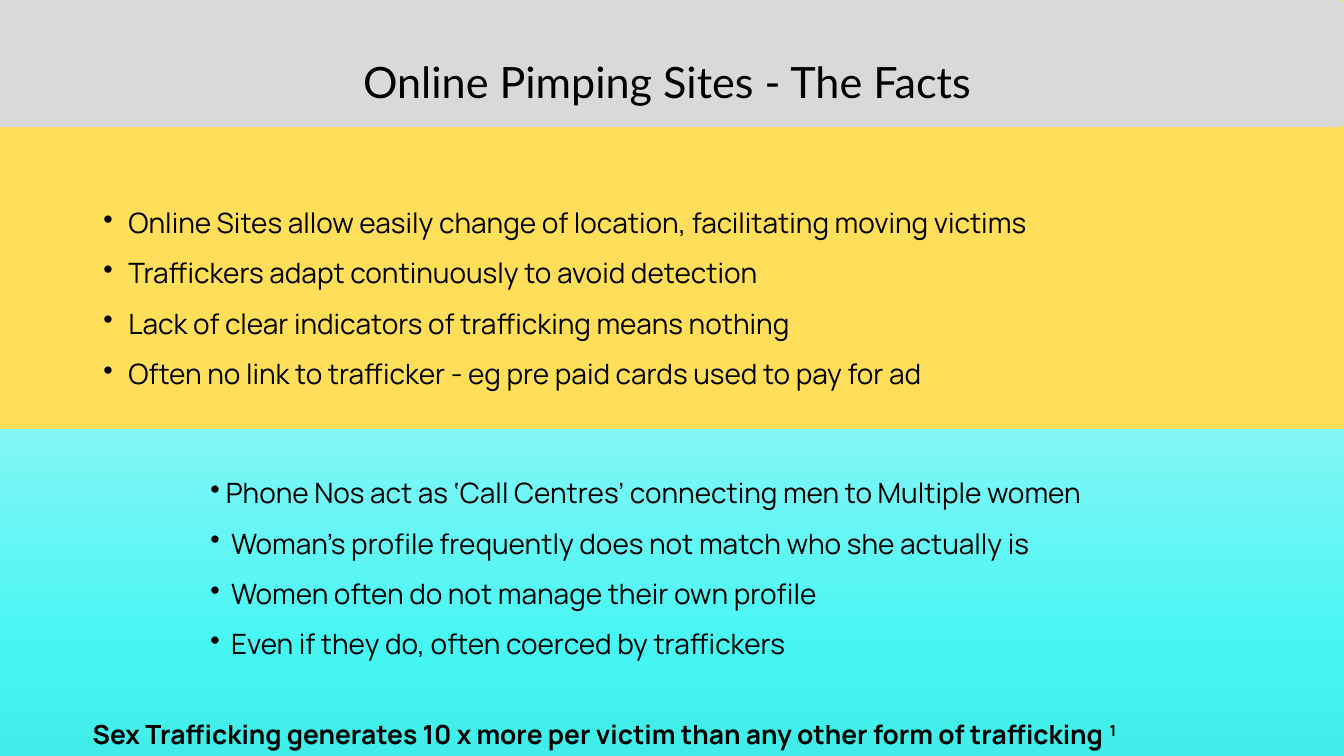
"""Build a slide of facts about online pimping sites."""
from copy import deepcopy
from dataclasses import dataclass

from lxml.etree import SubElement
from pptx import Presentation
from pptx.dml.color import RGBColor
from pptx.enum.shapes import MSO_SHAPE
from pptx.enum.text import MSO_AUTO_SIZE, PP_ALIGN
from pptx.oxml.ns import qn
from pptx.util import Emu, Pt

EMU_PER_PX = 9144


@dataclass(frozen=True)
class Theme:
    """Colours, fonts and type sizes of the slide."""
    page: str = "FFDE59"
    header: str = "D9D9D9"
    gradient: tuple = ((0, "82F6F6"), (0.69, "45F6F3"), (1, "41EDE9"))
    ink: str = "000000"
    title_font: str = "Lato"
    body_font: str = "Manrope"
    title_size: float = 46.2
    title_leading: float = 96.5
    body_size: float = 30
    closing_size: float = 28.3
    body_leading: float = 1.5


THEME = Theme()

SITE_FACTS = (
    "Online Sites allow easily change of location, facilitating moving victims",
    "Traffickers adapt continuously to avoid detection",
    "Lack of clear indicators of trafficking means nothing",
    "Often no link to trafficker - eg pre paid cards used to pay for ad",
)
PROFILE_FACTS = (
    "Phone Nos act as ‘Call Centres’ connecting men to Multiple women",
    "Woman’s profile frequently does not match who she actually is",
    "Women often do not manage their own profile",
    "Even if they do, often coerced by traffickers",
)


def px(length):
    """Turn px into EMU."""
    return Emu(length * EMU_PER_PX)


def add_band(page, left, top, width, height, radius):
    """Add a borderless band with slightly rounded corners."""
    band = page.shapes.add_shape(
        MSO_SHAPE.ROUNDED_RECTANGLE, px(left), px(top), px(width), px(height))
    band.adjustments[0] = radius / height
    band.shadow.inherit = False
    band.line.fill.background()
    return band


def fill_solid(fill, colour):
    """Fill with one colour."""
    fill.solid()
    fill.fore_color.rgb = RGBColor.from_string(colour)


def fill_gradient(band, stops):
    """Fill a band with a gradient from top to bottom."""
    band.fill.gradient()
    band.fill.gradient_angle = 270
    stop_list = next(band.element.iter(qn("a:gsLst")))
    for _ in stops[2:]:
        stop_list.append(deepcopy(stop_list[-1]))
    for stop, (position, colour) in zip(band.fill.gradient_stops, stops):
        stop.position = position
        stop.color.rgb = RGBColor.from_string(colour)


def add_text_box(page, left, top, width, height):
    """Add a wrapping text box without margins and return its frame."""
    box = page.shapes.add_textbox(px(left), px(top), px(width), px(height))
    frame = box.text_frame
    frame.word_wrap = True
    frame.auto_size = MSO_AUTO_SIZE.SHAPE_TO_FIT_TEXT
    frame.margin_left = frame.margin_right = 0
    frame.margin_top = frame.margin_bottom = 0
    return frame


def style_paragraph(para, font, size, leading, align, bold=False):
    """Set the type, leading and alignment of a paragraph."""
    para.alignment = align
    para.line_spacing = leading
    para.font.name = font
    para.font.size = Pt(size)
    para.font.bold = bold
    para.font.color.rgb = RGBColor.from_string(THEME.ink)


def set_bullet(para, margin, hang):
    """Give a paragraph a hanging bullet."""
    properties = para._p.get_or_add_pPr()
    properties.set("marL", str(px(margin)))
    properties.set("indent", str(px(-hang)))
    SubElement(properties, qn("a:buChar")).set("char", "•")


def add_bullets(page, place, facts, indents):
    """Add a bulleted list with one (margin, hang) pair for each fact."""
    frame = add_text_box(page, *place)
    for index, (fact, (margin, hang)) in enumerate(zip(facts, indents)):
        para = frame.add_paragraph() if index else frame.paragraphs[0]
        para.text = fact
        para.level = 1
        set_bullet(para, margin, hang)
        style_paragraph(para, THEME.body_font, THEME.body_size,
                        THEME.body_leading, PP_ALIGN.JUSTIFY)


def add_title(page, place, text):
    """Add the centred title."""
    para = add_text_box(page, *place).paragraphs[0]
    para.text = text
    style_paragraph(para, THEME.title_font, THEME.title_size,
                    Pt(THEME.title_leading), PP_ALIGN.CENTER)


def add_closing(page, place, text, note):
    """Add the bold closing line with a raised note number."""
    para = add_text_box(page, *place).paragraphs[0]
    para.add_run().text = text
    span = para.add_run()
    span.text = note
    span._r.get_or_add_rPr().set("baseline", "30000")
    style_paragraph(para, THEME.body_font, THEME.closing_size,
                    THEME.body_leading, PP_ALIGN.LEFT, bold=True)


def main():
    """Build and save the slide."""
    deck = Presentation()
    deck.slide_width, deck.slide_height = px(2000), px(1125)
    page = deck.slides.add_slide(deck.slide_layouts[6])
    fill_solid(page.background.fill, THEME.page)

    header = add_band(page, -5, 0, 2005, 189, 7)
    fill_solid(header.fill, THEME.header)
    lower = add_band(page, -8, 638, 2010, 487, 5)
    fill_gradient(lower, THEME.gradient)

    add_bullets(page, (282, 683, 1686, 297), PROFILE_FACTS,
                [(54, 23)] + [(62, 31)] * 3)
    add_title(page, (181, 26, 1623, 123), "Online Pimping Sites - The Facts")
    add_closing(
        page, (138, 1045, 1734, 125),
        "Sex Trafficking generates 10 x more per victim "
        "than any other form of trafficking ", "1")
    add_bullets(page, (117, 281, 1851, 297), SITE_FACTS, [(74, 37)] * 4)

    deck.save("out.pptx")


if __name__ == "__main__":
    main()
